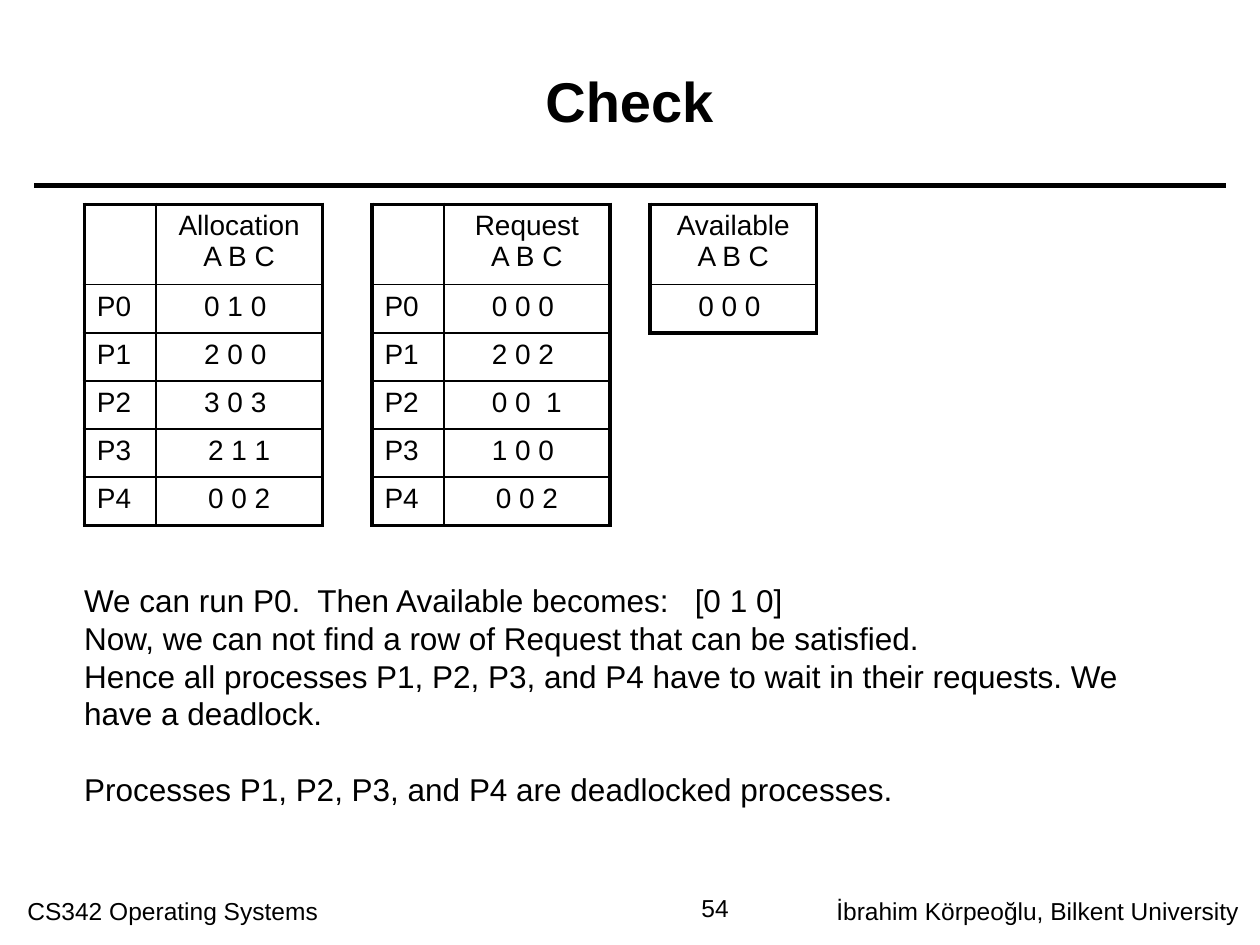
"""Build a slide that checks a resource allocation state for deadlock."""
import lxml.etree
import pptx
import pptx.dml.color
import pptx.enum.shapes
import pptx.enum.text
import pptx.oxml.ns
import pptx.util

Pt = pptx.util.Pt
ALIGN = pptx.enum.text.PP_ALIGN
ANCHOR = pptx.enum.text.MSO_ANCHOR
COLORS = {"ink": "000000", "background": "FFFFFF"}
FONT = "Arial"
TABLE_TOP, HEADER_HEIGHT, ROW_HEIGHT = 116.7, 46, 27.5
LABEL_WIDTH, VALUE_WIDTH = 41, 95
OUTER_BORDER, INNER_BORDER = 2.25, 1

ALLOCATION = ["0 1 0 ", "2 0 0 ", "3 0 3 ", "2 1 1", "0 0 2"]
REQUEST = ["0 0 0 ", "2 0 2 ", "0 0  1", "1 0 0 ", "0 0 2"]
CONCLUSIONS = [
    "We can run P0.  Then Available becomes:   [0 1 0]",
    "Now, we can not find a row of Request that can be satisfied.",
    "Hence all processes P1, P2, P3, and P4 have to wait in their requests. We",
    "have a deadlock.",
    "Processes P1, P2, P3, and P4 are deadlocked processes.",
]


def color(name):
    return pptx.dml.color.RGBColor.from_string(COLORS[name])


def style_paragraph(paragraph, size, align=ALIGN.LEFT, bold=False):
    paragraph.alignment = align
    paragraph.font.name = FONT
    paragraph.font.size = Pt(size)
    paragraph.font.bold = bold
    paragraph.font.color.rgb = color("ink")


def add_text(slide, box, lines, size, align=ALIGN.LEFT, bold=False, anchor=ANCHOR.TOP):
    frame = slide.shapes.add_textbox(*map(Pt, box)).text_frame
    frame.word_wrap = True
    frame.vertical_anchor = anchor
    frame.text = "\n".join(lines)
    for paragraph in frame.paragraphs:
        style_paragraph(paragraph, size, align, bold)
    return frame


def add_rule(slide, left, right, top):
    rule = slide.shapes.add_connector(
        pptx.enum.shapes.MSO_CONNECTOR.STRAIGHT, Pt(left), Pt(top), Pt(right), Pt(top))
    rule.line.color.rgb = color("ink")
    rule.line.width = Pt(3)
    lxml.etree.SubElement(rule._element.spPr, pptx.oxml.ns.qn("a:effectLst"))


def set_borders(cell, outer_sides):
    properties = cell._tc.get_or_add_tcPr()
    for side in "LRTB":
        width = OUTER_BORDER if side in outer_sides else INNER_BORDER
        border = lxml.etree.SubElement(
            properties, pptx.oxml.ns.qn(f"a:ln{side}"), w=str(Pt(width)))
        fill = lxml.etree.SubElement(border, pptx.oxml.ns.qn("a:solidFill"))
        lxml.etree.SubElement(fill, pptx.oxml.ns.qn("a:srgbClr"), val=COLORS["ink"])


def add_matrix(slide, left, title, values, labelled=True):
    rows = [["", f"{title}\nA B C"]]
    rows += [[f"P{index}", value] for index, value in enumerate(values)]
    widths = [LABEL_WIDTH, VALUE_WIDTH]
    if not labelled:
        rows, widths = [row[1:] for row in rows], widths[1:]
    heights = [HEADER_HEIGHT] + [ROW_HEIGHT] * len(values)
    table = slide.shapes.add_table(
        len(rows), len(widths), Pt(left), Pt(TABLE_TOP),
        Pt(sum(widths)), Pt(sum(heights))).table
    table.first_row = table.horz_banding = False
    for column, width in zip(table.columns, widths):
        column.width = Pt(width)
    last_row, last_column = len(rows) - 1, len(widths) - 1
    for i, texts in enumerate(rows):
        table.rows[i].height = Pt(heights[i])
        for j, text in enumerate(texts):
            cell = table.cell(i, j)
            paragraph = cell.text_frame.paragraphs[0]
            paragraph.text = text
            style_paragraph(paragraph, 16, ALIGN.CENTER if j == last_column else ALIGN.LEFT)
            edges = {"L": j == 0, "R": j == last_column, "T": i == 0, "B": i == last_row}
            set_borders(cell, [side for side, outer in edges.items() if outer])
            cell.fill.background()


def main():
    presentation = pptx.Presentation()
    presentation.slide_width, presentation.slide_height = Pt(720), Pt(540)
    slide = presentation.slides.add_slide(presentation.slide_layouts[6])
    slide.background.fill.solid()
    slide.background.fill.fore_color.rgb = color("background")

    add_rule(slide, 19.5, 700.5, 105.8)
    add_text(slide, (8.6, 508.3, 340, 28), ["CS342 Operating Systems"], 14)
    add_text(slide, (468, 508.3, 250, 26), ["İbrahim Körpeoğlu, Bilkent University"],
             14, ALIGN.CENTER)
    add_text(slide, (348.5, 506.5, 75, 24.5), ["54"], 14, ALIGN.RIGHT)
    add_text(slide, (25.2, 12.2, 669, 90), ["Check"], 32, ALIGN.CENTER, True, ANCHOR.MIDDLE)

    add_matrix(slide, 48.2, "Allocation", ALLOCATION)
    add_matrix(slide, 212.6, "Request", REQUEST)
    add_matrix(slide, 371.5, "Available", ["0 0 0 "], labelled=False)

    conclusions = add_text(slide, (41, 328.5, 620, 137), CONCLUSIONS, 18)
    conclusions.paragraphs[-1].space_before = Pt(21.6)
    presentation.save("out.pptx")


if __name__ == "__main__":
    main()
